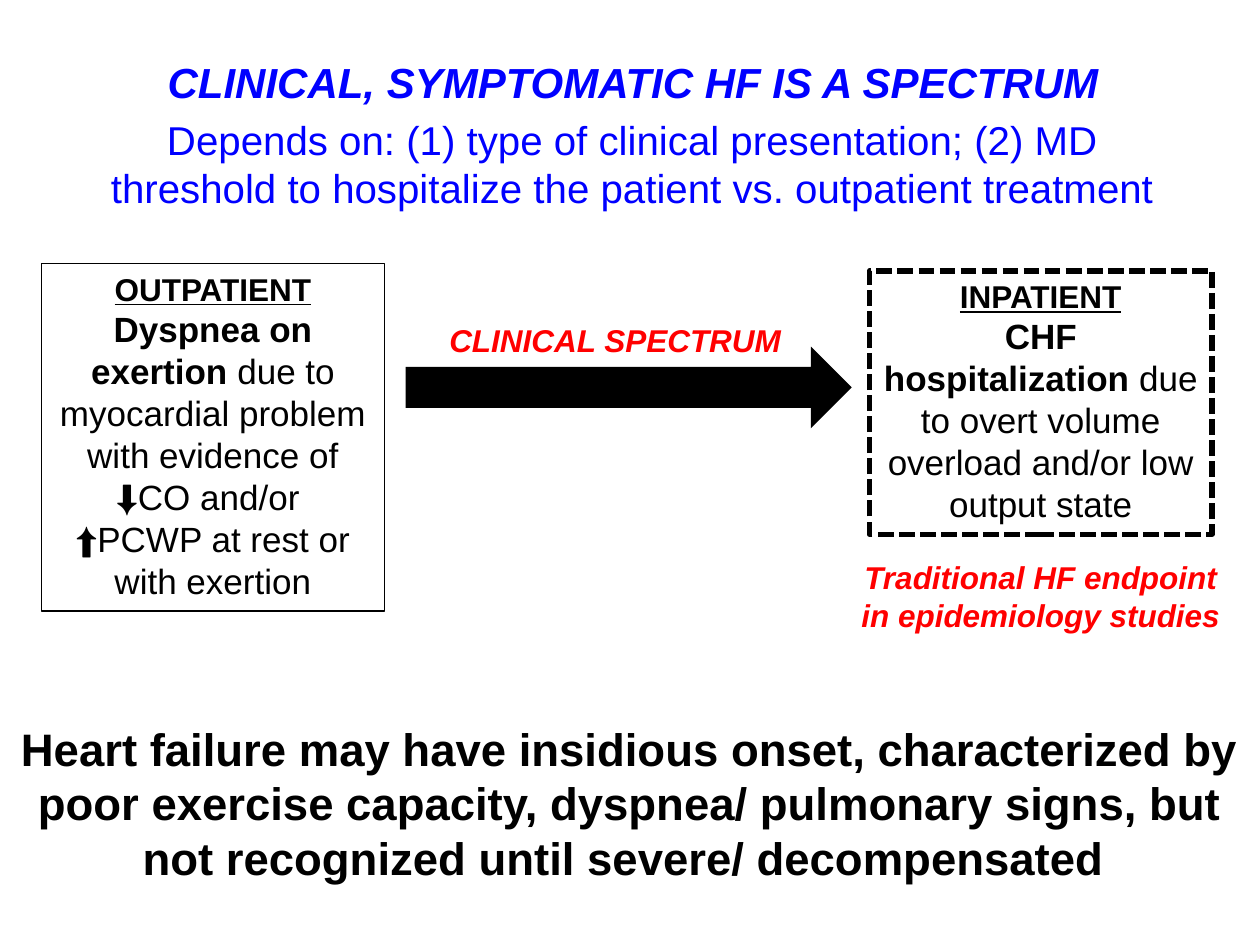
from pptx import Presentation
from pptx.dml.color import RGBColor
from pptx.enum.dml import MSO_LINE
from pptx.enum.shapes import MSO_SHAPE
from pptx.enum.text import MSO_ANCHOR, PP_ALIGN
from pptx.util import Inches, Pt

BLUE = RGBColor(0x00, 0x00, 0xFF)
BLACK = RGBColor(0x00, 0x00, 0x00)
RED = RGBColor(0xFF, 0x00, 0x00)

SLIDE_WIDTH, SLIDE_HEIGHT = Inches(10), Inches(7.5)
COLUMN, ROW = SLIDE_WIDTH / 100, SLIDE_HEIGHT / 75

HEADING = {"size": Pt(24), "bold": True, "italic": True}
SUBHEADING = {"size": Pt(23), "bold": False, "italic": False}
LABEL = {"size": Pt(18), "bold": True, "italic": True}
SETTING = {"size": Pt(18), "bold": True, "underline": True}
STRONG = {"size": Pt(20), "bold": True}
PLAIN = {"size": Pt(20), "bold": False}
CONCLUSION = {"size": Pt(26), "bold": True}


def scale(box):
    left, top, width, height = box
    return [round(left * COLUMN), round(top * ROW), round(width * COLUMN), round(height * ROW)]


def write(shape, paragraphs, color, space_before=0):
    frame = shape.text_frame
    frame.word_wrap = True
    frame.vertical_anchor = MSO_ANCHOR.TOP
    for index, spans in enumerate(paragraphs):
        para = frame.add_paragraph() if index else frame.paragraphs[0]
        para.alignment = PP_ALIGN.CENTER
        para.space_before = Pt(space_before)
        for text, formats in spans:
            span = para.add_run()
            span.text = text
            span.font.name = "Arial"
            span.font.color.rgb = color
            for name, value in formats.items():
                setattr(span.font, name, value)


def place_title(page, box):
    title = page.shapes.title
    for name, value in zip(("left", "top", "width", "height"), scale(box)):
        setattr(title, name, value)
    write(title, [
        [("CLINICAL, SYMPTOMATIC HF IS A SPECTRUM", HEADING)],
        [("Depends on: (1) type of clinical presentation; (2) MD threshold to hospitalize "
          "the patient vs. outpatient treatment", SUBHEADING)],
    ], BLUE, space_before=4.8)


def place_text(page, box, text, formats, color):
    write(page.shapes.add_textbox(*scale(box)), [[(text, formats)]], color)


def place_patient_box(page, box, paragraphs, line_formats):
    shape = page.shapes.add_shape(MSO_SHAPE.RECTANGLE, *scale(box))
    shape.shadow.inherit = False
    shape.fill.background()
    shape.line.color.rgb = BLACK
    for name, value in line_formats.items():
        setattr(shape.line, name, value)
    write(shape, paragraphs, BLACK)


def place_spectrum(page, box):
    left, top, width, height = box
    arrow = page.shapes.add_shape(MSO_SHAPE.RIGHT_ARROW, *scale(box))
    arrow.shadow.inherit = False
    arrow.fill.solid()
    arrow.fill.fore_color.rgb = BLACK
    arrow.line.fill.background()
    place_text(page, (left + 0.7, top - 2.5, width * 0.9, 4), "CLINICAL SPECTRUM", LABEL, RED)


def main():
    deck = Presentation()
    deck.slide_width, deck.slide_height = SLIDE_WIDTH, SLIDE_HEIGHT
    page = deck.slides.add_slide(deck.slide_layouts[5])

    place_title(page, (7.6, 4, 85.3, 15.4))
    place_patient_box(page, (3.3, 20.9, 27.2, 27.6), [
        [("OUTPATIENT", SETTING)],
        [("Dyspnea on exertion ", STRONG),
         ("due to myocardial problem with evidence of ⬇CO and/or ", PLAIN)],
        [("⬆PCWP at rest or with exertion", PLAIN)],
    ], {"width": Pt(0.75)})
    place_spectrum(page, (32.2, 27.5, 35.4, 6.5))
    place_patient_box(page, (69, 21.5, 27.2, 20.9), [
        [("INPATIENT", SETTING)],
        [("CHF hospitalization ", STRONG),
         ("due to overt volume overload and/or low output state", PLAIN)],
    ], {"width": Pt(3), "dash_style": MSO_LINE.SQUARE_DOT})
    place_text(page, (66.7, 43.8, 31.8, 7.1),
               "Traditional HF endpoint in epidemiology studies", LABEL, RED)
    place_text(page, (0, 56.7, 100, 14.1),
               "Heart failure may have insidious onset, characterized by poor exercise capacity, "
               "dyspnea/ pulmonary signs, but not recognized until severe/ decompensated ",
               CONCLUSION, BLACK)
    deck.save("out.pptx")


if __name__ == "__main__":
    main()
